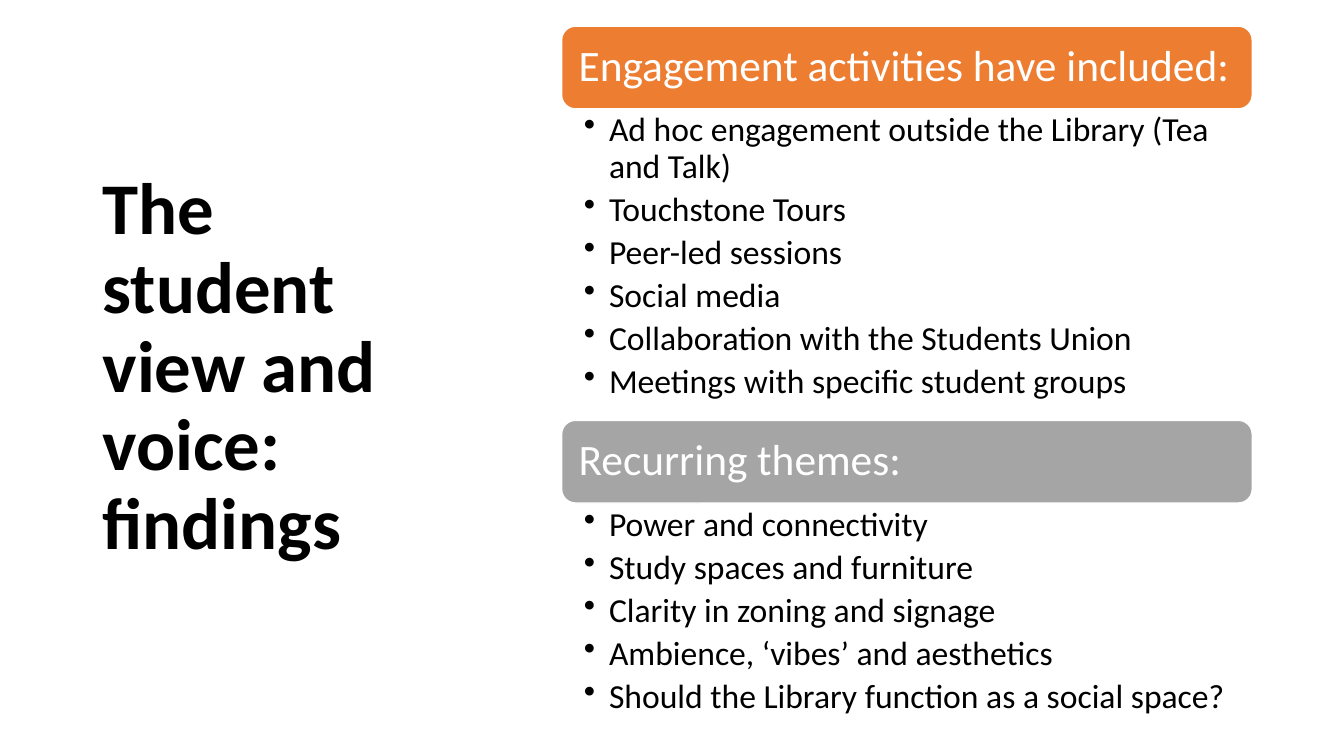
import pptx
import pptx.util
import pptx.dml.color
import pptx.enum.shapes
import pptx.enum.text
import lxml.etree
from pptx.oxml.ns import qn
from pptx.util import Inches, Pt

TITLE = "The student view and voice: findings"
SECTIONS = [
    {
        "heading": "Engagement activities have included:",
        "color": "orange",
        "list_height": 3.09,
        "items": [
            "Ad hoc engagement outside the Library (Tea and Talk)",
            "Touchstone Tours",
            "Peer-led sessions",
            "Social media",
            "Collaboration with the Students Union",
            "Meetings with specific student groups",
        ],
    },
    {
        "heading": "Recurring themes:",
        "color": "gray",
        "list_height": 2.25,
        "items": [
            "Power and connectivity",
            "Study spaces and furniture",
            "Clarity in zoning and signage",
            "Ambience, ‘vibes’ and aesthetics",
            "Should the Library function as a social space?",
        ],
    },
]
COLORS = {"orange": "ED7D31", "gray": "A5A5A5", "white": "FFFFFF", "black": "000000"}
FONT = "Calibri"
COLUMN_LEFT, COLUMN_TOP, COLUMN_WIDTH = 5.57, 0.26, 6.85
HEADING_HEIGHT = 0.82


def rgb(name):
    return pptx.dml.color.RGBColor.from_string(COLORS[name])


def write_text(shape, lines, size, color, margins, anchor, bold=False, space_after=0):
    """Fill a shape with one left-aligned paragraph per line; margins are left, top, right, bottom."""
    frame = shape.text_frame
    frame.word_wrap = True
    frame.vertical_anchor = anchor
    frame.margin_left, frame.margin_top, frame.margin_right, frame.margin_bottom = map(Inches, margins)
    frame.text = "\n".join(lines)
    for paragraph in frame.paragraphs:
        paragraph.alignment = pptx.enum.text.PP_ALIGN.LEFT
        paragraph.line_spacing = 0.9
        paragraph.space_after = Pt(space_after)
        font = paragraph.runs[0].font
        font.name, font.size, font.bold = FONT, Pt(size), bold
        font.color.rgb = rgb(color)


def add_bullets(shape):
    for paragraph in shape.text_frame.paragraphs:
        properties = paragraph._p.get_or_add_pPr()
        properties.set("marL", str(Inches(0.25)))
        properties.set("indent", str(-Inches(0.25)))
        lxml.etree.SubElement(properties, qn("a:buChar")).set("char", "•")


def add_heading(slide, section, top):
    heading = slide.shapes.add_shape(
        pptx.enum.shapes.MSO_SHAPE.ROUNDED_RECTANGLE,
        Inches(COLUMN_LEFT), Inches(top), Inches(COLUMN_WIDTH), Inches(HEADING_HEIGHT))
    heading.shadow.inherit = False
    heading.fill.solid()
    heading.fill.fore_color.rgb = rgb(section["color"])
    heading.line.color.rgb = rgb("white")
    heading.line.width = Pt(1)
    write_text(heading, [section["heading"]], 31, "white", (0.13, 0.13, 0.13, 0.13),
               pptx.enum.text.MSO_ANCHOR.MIDDLE)


def add_list(slide, section, top):
    box = slide.shapes.add_textbox(
        Inches(COLUMN_LEFT), Inches(top), Inches(COLUMN_WIDTH), Inches(section["list_height"]))
    write_text(box, section["items"], 24, "black", (0.22, 0.04, 0.24, 0.04),
               pptx.enum.text.MSO_ANCHOR.TOP, space_after=4.8)
    add_bullets(box)


def main():
    presentation = pptx.Presentation()
    presentation.slide_width, presentation.slide_height = Inches(13.33), Inches(7.5)
    slide = presentation.slides.add_slide(presentation.slide_layouts[6])

    title = slide.shapes.add_textbox(Inches(0.92), Inches(0.61), Inches(3.69), Inches(6.09))
    write_text(title, [TITLE], 52, "black", (0.1, 0.05, 0.1, 0.05),
               pptx.enum.text.MSO_ANCHOR.MIDDLE, bold=True)

    top = COLUMN_TOP
    for section in SECTIONS:
        add_heading(slide, section, top)
        add_list(slide, section, top + HEADING_HEIGHT)
        top += HEADING_HEIGHT + section["list_height"]

    presentation.save("out.pptx")


if __name__ == "__main__":
    main()
